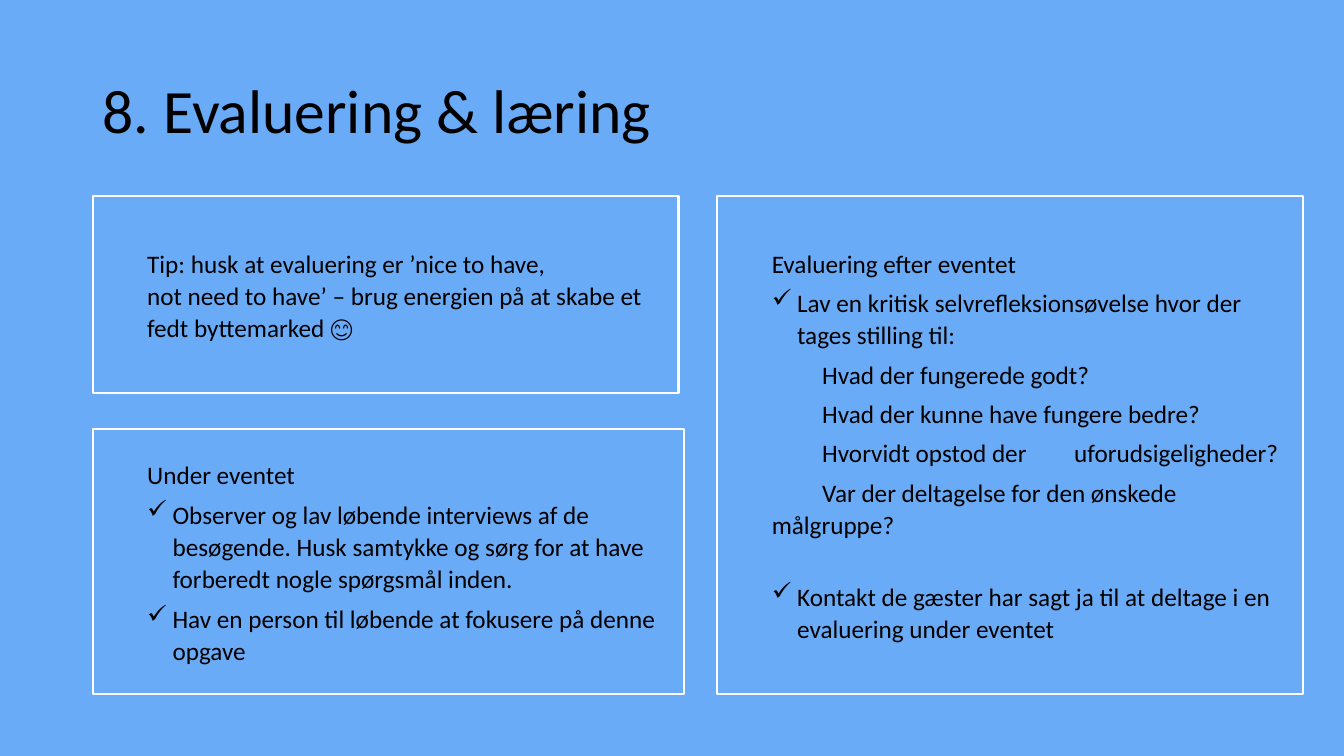
from dataclasses import dataclass

from lxml import etree
from pptx import Presentation
from pptx.dml.color import RGBColor
from pptx.enum.shapes import MSO_SHAPE
from pptx.enum.text import MSO_ANCHOR, PP_ALIGN
from pptx.oxml.ns import qn
from pptx.util import Cm, Pt

RECTANGLE = MSO_SHAPE.RECTANGLE
MIDDLE = MSO_ANCHOR.MIDDLE
LEFT = PP_ALIGN.LEFT


@dataclass(frozen=True)
class Theme:
    background: RGBColor = RGBColor(0x6A, 0xAB, 0xF7)
    border: RGBColor = RGBColor(0xFF, 0xFF, 0xFF)
    text: RGBColor = RGBColor(0, 0, 0)
    font: str = "Calibri"
    title_size: Pt = Pt(44)
    body_size: Pt = Pt(18)
    border_width: Pt = Pt(1.5)


THEME = Theme()
WIDTH, HEIGHT = 33.87, 19.05
MARGIN = 2.34
PANEL_TOP, PANEL_BOTTOM = 4.93, 17.48
PANEL_WIDTH = 14.76
LOWER_TOP = 10.82
RIGHT_COLUMN = 18.08

PANEL_FRAME = {
    "word_wrap": True, "vertical_anchor": MIDDLE,
    "margin_left": Cm(0.1), "margin_right": Cm(0.25),
    "margin_top": Cm(0.13), "margin_bottom": Cm(0.13),
}
PANEL_PARAGRAPH = {
    "alignment": LEFT, "line_spacing": 1.07,
    "space_before": Pt(5), "space_after": Pt(0),
}

# Each paragraph: wording, whether it is ticked, space after in points
TIP = [
    ("Tip: husk at evaluering er ’nice to have, \vnot need to have’ – "
     "brug energien på at skabe et fedt byttemarked 😊", False, 8),
]
DURING = [
    ("Under eventet", False, 0),
    ("Observer og lav løbende interviews af de besøgende. Husk samtykke og "
     "sørg for at have forberedt nogle spørgsmål inden.", True, 0),
    ("Hav en person til løbende at fokusere på denne opgave", True, 0),
]
AFTER = [
    ("Evaluering efter eventet", False, 0),
    ("Lav en kritisk selvrefleksionsøvelse hvor der tages stilling til:",
     True, 0),
    ("\tHvad der fungerede godt?", False, 0),
    ("\tHvad der kunne have fungere bedre?", False, 0),
    ("\tHvorvidt opstod der \tuforudsigeligheder?", False, 0),
    ("\tVar der deltagelse for den ønskede \tmålgruppe?", False, 23),
    ("Kontakt de gæster har sagt ja til at deltage i en evaluering under "
     "eventet", True, 0),
]


def apply_format(target, values):
    for name, value in values.items():
        setattr(target, name, value)


def write_text(para, text, size):
    para.text = text
    apply_format(para.font, {"name": THEME.font, "size": size})
    para.font.color.rgb = THEME.text


def set_indent(para, ticked):
    properties = para._p.get_or_add_pPr()
    left, hanging = (1.91, -0.64) if ticked else (1.27, 0)
    properties.set("marL", str(Cm(left)))
    properties.set("indent", str(Cm(hanging)))
    if ticked:
        etree.SubElement(properties, qn("a:buChar")).set("char", "✓")
    else:
        etree.SubElement(properties, qn("a:buNone"))


def add_rectangle(page, box):
    shape = page.shapes.add_shape(RECTANGLE, *map(Cm, box))
    shape.shadow.inherit = False
    return shape


def add_background(page, box):
    shape = add_rectangle(page, box)
    shape.fill.solid()
    shape.fill.fore_color.rgb = THEME.background
    shape.line.fill.background()


def add_title(page, box, text):
    frame = page.shapes.add_textbox(*map(Cm, box)).text_frame
    apply_format(frame, {"word_wrap": True, "vertical_anchor": MIDDLE})
    para = frame.paragraphs[0]
    para.line_spacing = 0.9
    write_text(para, text, THEME.title_size)


def add_panel(page, box, items):
    """Draw an outlined panel with plain and ticked paragraphs."""
    shape = add_rectangle(page, box)
    shape.fill.background()
    shape.line.color.rgb = THEME.border
    shape.line.width = THEME.border_width
    frame = shape.text_frame
    apply_format(frame, PANEL_FRAME)
    for index, (text, ticked, space_after) in enumerate(items):
        para = frame.add_paragraph() if index else frame.paragraphs[0]
        write_text(para, text, THEME.body_size)
        apply_format(para, PANEL_PARAGRAPH | {"space_after": Pt(space_after)})
        set_indent(para, ticked)


def main():
    deck = Presentation()
    deck.slide_width, deck.slide_height = Cm(WIDTH), Cm(HEIGHT)
    page = deck.slides.add_slide(deck.slide_layouts[6])
    add_background(page, (0, 0, WIDTH, HEIGHT))
    add_title(page, (MARGIN, 1.02, 29.21, 3.68), "8. Evaluering & læring")
    add_panel(page, (MARGIN, LOWER_TOP, 14.91, PANEL_BOTTOM - LOWER_TOP),
              DURING)
    add_panel(page, (MARGIN, PANEL_TOP, PANEL_WIDTH, 4.98), TIP)
    add_panel(page, (RIGHT_COLUMN, PANEL_TOP, PANEL_WIDTH,
                     PANEL_BOTTOM - PANEL_TOP), AFTER)
    deck.save("out.pptx")


if __name__ == "__main__":
    main()
